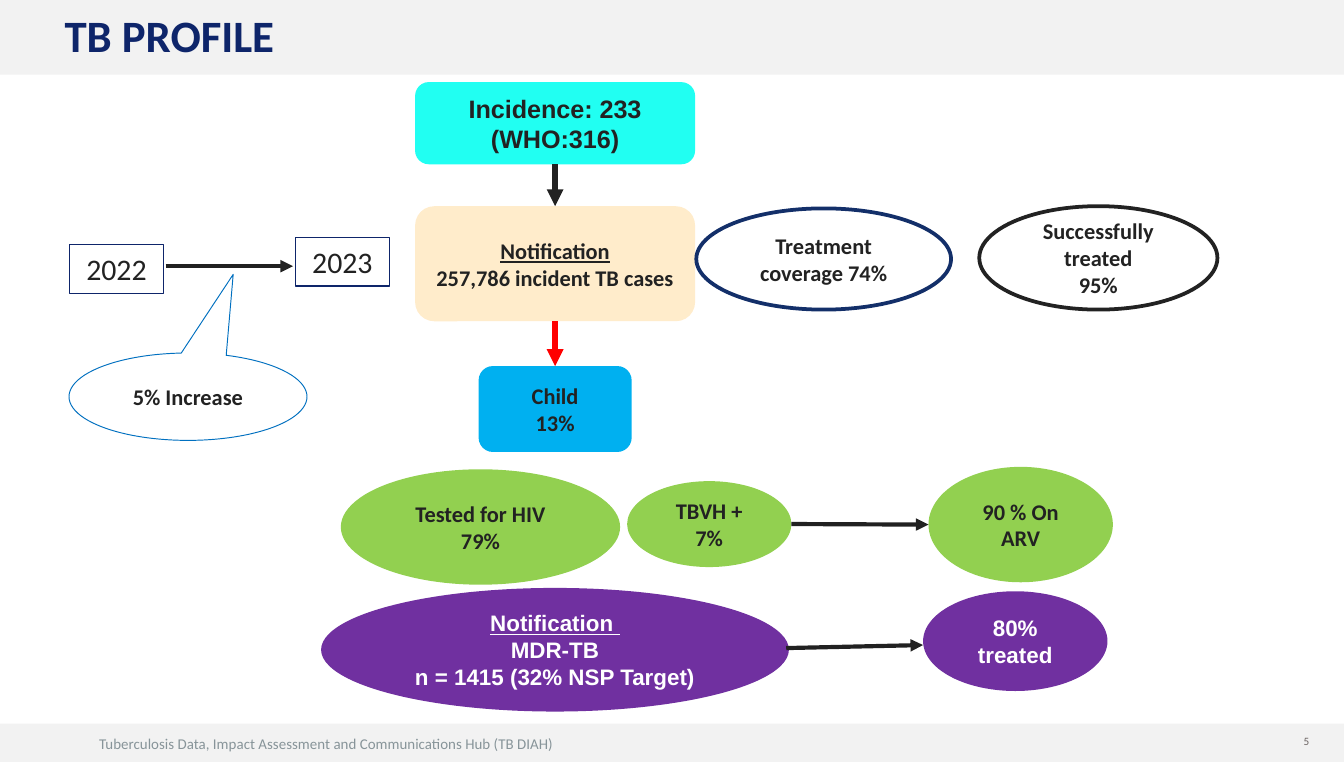
from dataclasses import dataclass

from lxml import etree
from pptx import Presentation
from pptx.dml.color import RGBColor
from pptx.enum.shapes import MSO_CONNECTOR, MSO_SHAPE
from pptx.enum.text import MSO_ANCHOR, PP_ALIGN
from pptx.oxml.ns import qn
from pptx.util import Pt

BAND = MSO_SHAPE.RECTANGLE
OVAL = MSO_SHAPE.FLOWCHART_CONNECTOR
YEAR_BOX = MSO_SHAPE.FLOWCHART_PROCESS
STAGE_BOX = MSO_SHAPE.FLOWCHART_ALTERNATE_PROCESS
CALLOUT = MSO_SHAPE.OVAL_CALLOUT
STRAIGHT = MSO_CONNECTOR.STRAIGHT
TOP, MIDDLE, BOTTOM = MSO_ANCHOR.TOP, MSO_ANCHOR.MIDDLE, MSO_ANCHOR.BOTTOM
LEFT, CENTER, RIGHT = PP_ALIGN.LEFT, PP_ALIGN.CENTER, PP_ALIGN.RIGHT
TOP_SIDE, BOTTOM_SIDE = 0, 2


@dataclass(frozen=True)
class Theme:
    sans: str = "Calibri"
    alternate: str = "Arial"
    band: str = "F2F2F2"
    ink: str = "222222"
    arrow: str = "212121"
    alert: str = "FF0000"
    navy: str = "0E256A"
    coverage: str = "132F69"
    callout: str = "0070C0"
    white: str = "FFFFFF"
    incidence: str = "21FFF2"
    notified: str = "FFECCB"
    child: str = "00B0F0"
    hiv: str = "92D050"
    resistant: str = "7030A0"
    footer: str = "879499"
    number: str = "6C6463"
    title_size: float = 24
    year_size: float = 16
    incidence_size: float = 13.5
    body_size: float = 12
    footer_size: float = 8
    number_size: float = 6


THEME = Theme()


@dataclass(frozen=True)
class TextStyle:
    size: float = THEME.body_size
    font: str = THEME.sans
    color: str = THEME.ink
    bold: bool = True
    align: PP_ALIGN = CENTER
    anchor: MSO_ANCHOR = MIDDLE


BODY = TextStyle()
YEAR = TextStyle(size=THEME.year_size, bold=False)
INCIDENCE = TextStyle(size=THEME.incidence_size, font=THEME.alternate)
RESISTANT = TextStyle(font=THEME.alternate, color=THEME.white)
TITLE = TextStyle(THEME.title_size, color=THEME.navy, align=LEFT, anchor=BOTTOM)
FOOTER = TextStyle(THEME.footer_size, color=THEME.footer, bold=False, align=LEFT, anchor=TOP)
NUMBER = TextStyle(THEME.number_size, color=THEME.number, bold=False, align=RIGHT)


def rgb(code):
    return RGBColor.from_string(code)


def write(frame, lines, style, heading=False):
    frame.word_wrap = True
    frame.vertical_anchor = style.anchor
    for index, line in enumerate(lines):
        paragraph = frame.paragraphs[0] if index == 0 else frame.add_paragraph()
        paragraph.alignment = style.align
        font = paragraph.font
        font.name, font.size, font.bold = style.font, Pt(style.size), style.bold
        font.color.rgb = rgb(style.color)
        if heading and index == 0:
            font.underline = True
        paragraph.add_run().text = line


def add_label(slide, box, text, style):
    label = slide.shapes.add_textbox(*map(Pt, box))
    write(label.text_frame, [text], style)


def add_node(slide, kind, box, lines=(), style=BODY, fill=None, outline=None,
             weight=2, heading=False):
    node = slide.shapes.add_shape(kind, *map(Pt, box))
    node.shadow.inherit = False
    if fill:
        node.fill.solid()
        node.fill.fore_color.rgb = rgb(fill)
    else:
        node.fill.background()
    if outline:
        node.line.color.rgb = rgb(outline)
        node.line.width = Pt(weight)
    else:
        node.line.fill.background()
    write(node.text_frame, lines, style, heading)
    return node


def add_arrow(slide, start=(0, 0), end=(0, 0), color=THEME.arrow, weight=2.25):
    arrow = slide.shapes.add_connector(STRAIGHT, *map(Pt, (*start, *end)))
    arrow.line.color.rgb = rgb(color)
    arrow.line.width = Pt(weight)
    etree.SubElement(arrow.line._get_or_add_ln(), qn("a:tailEnd"), type="triangle")
    etree.SubElement(arrow._element.spPr, qn("a:effectLst"))
    return arrow


def link_down(slide, upper, lower, color):
    arrow = add_arrow(slide, color=color, weight=3)
    arrow.begin_connect(upper, BOTTOM_SIDE)
    arrow.end_connect(lower, TOP_SIDE)


def add_page_frame(slide):
    add_node(slide, BAND, (0, 387.5, 720, 20.5), fill=THEME.band)
    add_label(slide, (46, 390, 360, 17),
              "Tuberculosis Data, Impact Assessment and Communications Hub (TB DIAH)", FOOTER)
    add_node(slide, BAND, (0, 0, 720, 40), fill=THEME.band)
    add_label(slide, (658, 389.5, 50.5, 14.5), "5", NUMBER)
    add_label(slide, (27.5, 2, 612, 34.5), "TB PROFILE", TITLE)


def add_trend(slide):
    for year, left, top in (("2022", 37.2, 131), ("2023", 158.2, 127.2)):
        add_node(slide, YEAR_BOX, (left, top, 50.5, 26), [year], YEAR,
                 THEME.white, THEME.navy, 0.75)
    add_arrow(slide, (88.8, 142.5), (157, 142.5))
    increase = add_node(slide, CALLOUT, (37, 189, 127.5, 46.8), ["5% Increase"],
                        outline=THEME.callout, weight=0.5)
    increase.adjustments[0] = 0.19
    increase.adjustments[1] = -1.4


def add_cascade(slide):
    axis = 297.4

    def stage(top, width, height, lines, fill, style=BODY, heading=False):
        box = (axis - width / 2, top, width, height)
        return add_node(slide, STAGE_BOX, box, lines, style, fill, heading=heading)

    incidence = stage(44, 150, 44, ["Incidence: 233 (WHO:316)"], THEME.incidence, INCIDENCE)
    notified = stage(110.4, 150, 61.6, ["Notification", "257,786 incident TB cases"],
                     THEME.notified, heading=True)
    child = stage(196, 82, 46, ["Child", "13%"], THEME.child)
    link_down(slide, incidence, notified, THEME.ink)
    link_down(slide, notified, child, THEME.alert)


def add_outcomes(slide):
    add_node(slide, OVAL, (373, 111.6, 136.5, 54.2), ["Treatment coverage 74%"],
             outline=THEME.coverage)
    add_node(slide, OVAL, (524.6, 110.4, 127.6, 55.4), ["Successfully treated", "95%"],
             outline=THEME.ink)


def add_hiv_row(slide):
    for box, lines in (
        ((182.6, 251.3, 149.6, 61.8), ["Tested for HIV", "79%"]),
        ((336, 257.6, 88, 46), ["TBVH + 7%"]),
        ((497.4, 250, 98.8, 61.8), ["90 % On ARV"]),
    ):
        add_node(slide, OVAL, box, lines, fill=THEME.hiv)
    add_arrow(slide, (424, 280.6), (497.4, 280.9))


def add_resistant_row(slide):
    add_node(slide, OVAL, (172, 314.8, 250.6, 66.2),
             ["Notification ", "MDR-TB", "n = 1415 (32% NSP Target)"],
             RESISTANT, THEME.resistant, heading=True)
    add_node(slide, OVAL, (494.5, 316.6, 98.8, 53.4), ["80%", "treated"],
             RESISTANT, THEME.resistant)
    add_arrow(slide, (421.2, 347), (494.5, 345.4))


def main():
    deck = Presentation()
    deck.slide_width, deck.slide_height = Pt(720), Pt(408)
    slide = deck.slides.add_slide(deck.slide_layouts[6])
    add_page_frame(slide)
    add_trend(slide)
    add_cascade(slide)
    add_outcomes(slide)
    add_hiv_row(slide)
    add_resistant_row(slide)
    deck.save("out.pptx")


if __name__ == "__main__":
    main()
